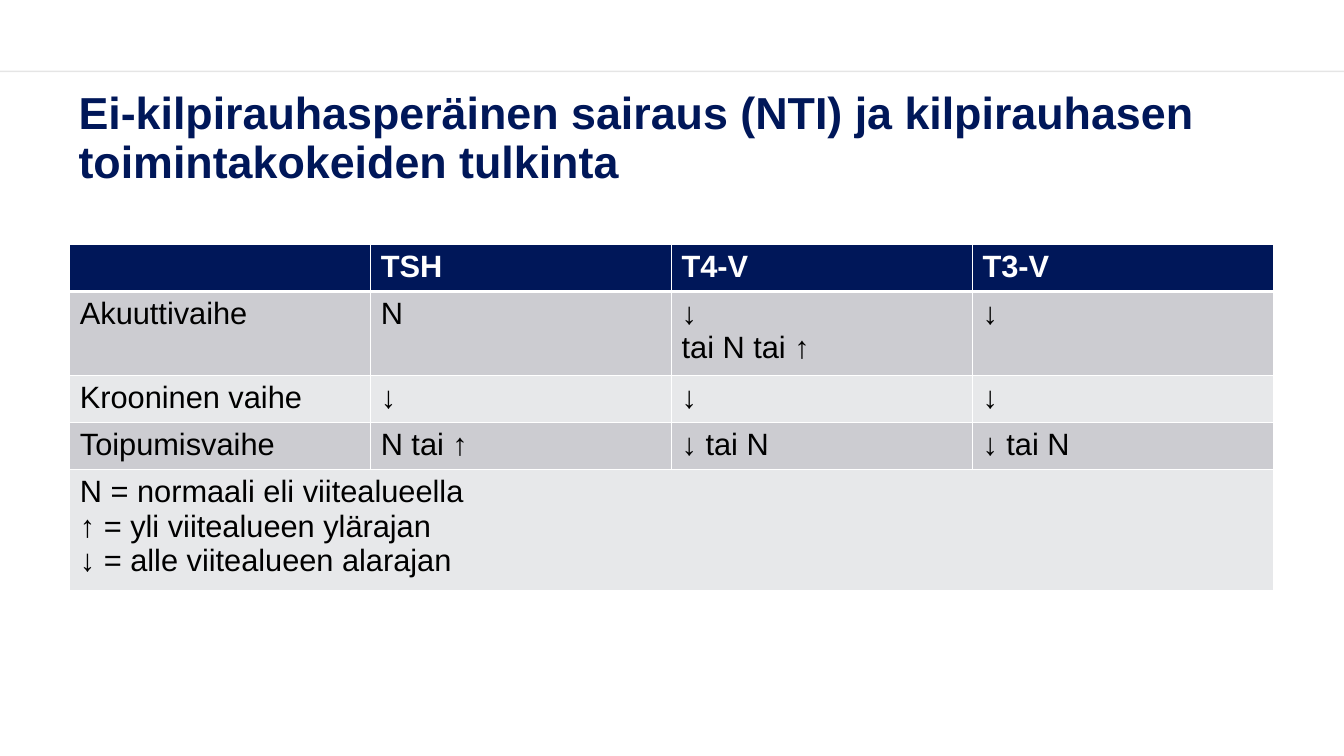
from dataclasses import dataclass

from lxml import etree
from pptx import Presentation
from pptx.dml.color import RGBColor
from pptx.enum.shapes import MSO_CONNECTOR
from pptx.enum.text import MSO_ANCHOR
from pptx.oxml.ns import qn
from pptx.util import Cm, Pt

MIDDLE = MSO_ANCHOR.MIDDLE
STRAIGHT = MSO_CONNECTOR.STRAIGHT

SLIDE_WIDTH, SLIDE_HEIGHT = 33.87, 19.05
TITLE = "Ei-kilpirauhasperäinen sairaus (NTI) ja kilpirauhasen toimintakokeiden tulkinta"
TEST_ROWS = [
    ["", "TSH", "T4-V", "T3-V"],
    ["Akuuttivaihe", "N", "↓\ntai N tai ↑", "↓"],
    ["Krooninen vaihe", "↓", "↓", "↓"],
    ["Toipumisvaihe", "N tai ↑", "↓ tai N", "↓ tai N"],
    ["N = normaali eli viitealueella\n↑ = yli viitealueen ylärajan\n↓ = alle viitealueen alarajan"],
]
ROW_HEIGHTS = [1.1, 1.98, 1.12, 1.12, 2.88]


@dataclass(frozen=True)
class Theme:
    font: str = "Arial"
    title_size: int = 32
    table_size: int = 22
    navy: str = "001759"
    white: str = "FFFFFF"
    black: str = "000000"
    bands: tuple = ("E7E8EA", "CCCCD1")


class SlideBuilder:
    def __init__(self, slide, theme):
        self.slide = slide
        self.theme = theme

    def add_text(self, paragraph, text, size, color, bold=False):
        """Add text to a paragraph; a newline becomes a line break."""
        for index, line in enumerate(text.split("\n")):
            if index:
                paragraph.add_line_break()
            run = paragraph.add_run()
            run.text = line
            run.font.name = self.theme.font
            run.font.size = Pt(size)
            run.font.bold = bold
            run.font.color.rgb = RGBColor.from_string(color)

    def rule(self, top, width, opacity):
        line = self.slide.shapes.add_connector(STRAIGHT, 0, Cm(top), Cm(width), Cm(top))
        line.line.width = Pt(1)
        line.line.color.rgb = RGBColor.from_string(self.theme.black)
        properties = line._element.spPr
        color = next(properties.iter(qn("a:srgbClr")))
        etree.SubElement(color, qn("a:alpha"), val=str(opacity * 1000))
        etree.SubElement(properties, qn("a:effectLst"))

    def title(self, text, left, top, width, height):
        box = self.slide.shapes.add_textbox(Cm(left), Cm(top), Cm(width), Cm(height))
        frame = box.text_frame
        frame.word_wrap = True
        frame.vertical_anchor = MIDDLE
        paragraph = frame.paragraphs[0]
        paragraph.line_spacing = 0.9
        self.add_text(paragraph, text, self.theme.title_size, self.theme.navy, bold=True)

    def border(self, cell, **widths):
        """Draw white cell edges; widths in points keyed by L, R, T and B."""
        properties = cell._tc.get_or_add_tcPr()
        for side, width in widths.items():
            edge = etree.SubElement(properties, qn(f"a:ln{side}"), w=str(Pt(width)))
            fill = etree.SubElement(edge, qn("a:solidFill"))
            etree.SubElement(fill, qn("a:srgbClr"), val=self.theme.white)

    def table(self, rows, heights, left, top, width):
        """Build a table; a row with a single text spans all columns."""
        columns = len(rows[0])
        table = self.slide.shapes.add_table(
            len(rows), columns, Cm(left), Cm(top), Cm(width), Cm(sum(heights))
        ).table
        table.horz_banding = False
        for row_index, (texts, height) in enumerate(zip(rows, heights)):
            table.rows[row_index].height = Cm(height)
            header = row_index == 0
            fill = self.theme.navy if header else self.theme.bands[row_index % 2]
            color = self.theme.white if header else self.theme.black
            for column in range(columns):
                cell = table.cell(row_index, column)
                self.border(cell, L=1, R=1, T=3 if row_index == 1 else 1, B=3 if header else 1)
                cell.fill.solid()
                cell.fill.fore_color.rgb = RGBColor.from_string(fill)
            if len(texts) == 1:
                table.cell(row_index, 0).merge(table.cell(row_index, columns - 1))
            for column, text in enumerate(texts):
                paragraph = table.cell(row_index, column).text_frame.paragraphs[0]
                if text:
                    self.add_text(paragraph, text, self.theme.table_size, color, bold=header)
                else:
                    paragraph.font.size = Pt(self.theme.table_size)


def main():
    presentation = Presentation()
    presentation.slide_width = Cm(SLIDE_WIDTH)
    presentation.slide_height = Cm(SLIDE_HEIGHT)
    slide = presentation.slides.add_slide(presentation.slide_layouts[6])
    builder = SlideBuilder(slide, Theme())
    builder.rule(top=1.8, width=SLIDE_WIDTH, opacity=10)
    builder.title(TITLE, left=1.73, top=2.36, width=30.33, height=2.31)
    builder.table(TEST_ROWS, ROW_HEIGHTS, left=1.76, top=6.16, width=30.33)
    presentation.save("out.pptx")


if __name__ == "__main__":
    main()
